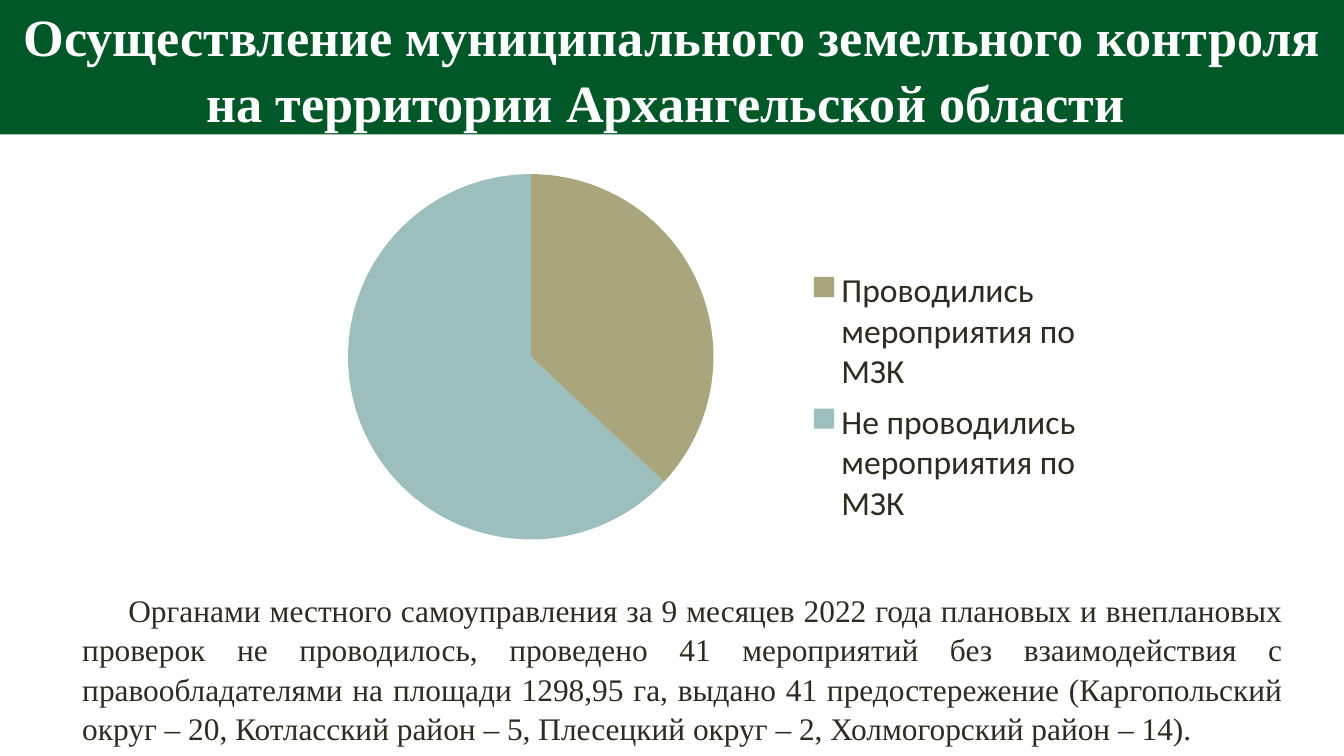
import pptx
import pptx.chart.data
import pptx.dml.color
import pptx.enum.chart
import pptx.enum.text
import pptx.oxml
import pptx.oxml.ns
import pptx.util

Cm = pptx.util.Cm
Pt = pptx.util.Pt
RGBColor = pptx.dml.color.RGBColor
Align = pptx.enum.text.PP_ALIGN
Anchor = pptx.enum.text.MSO_ANCHOR

GREEN = RGBColor(0x00, 0x58, 0x28)
WHITE = RGBColor(0xFF, 0xFF, 0xFF)
INK = RGBColor(0x2F, 0x2B, 0x20)
OLIVE = RGBColor(0xA9, 0xA5, 0x7C)
TEAL = RGBColor(0x9C, 0xBE, 0xBD)

HEADING = "Осуществление муниципального земельного контроля на территории Архангельской области "
SUMMARY = (
    "Органами местного самоуправления за 9 месяцев 2022 года плановых и внеплановых "
    "проверок не проводилось, проведено 41 мероприятий без взаимодействия с "
    "правообладателями на площади 1298,95 га, выдано 41 предостережение "
    "(Каргопольский округ – 20, Котласский район – 5, Плесецкий округ – 2, "
    "Холмогорский район – 14)."
)
SHARES = [
    ("Проводились мероприятия по МЗК", 37, OLIVE),
    ("Не проводились мероприятия по МЗК", 63, TEAL),
]

# left, top, width, height
HEADING_BOX = (Cm(0), Cm(0), Cm(25.4), Cm(2.54))
SUMMARY_BOX = (Cm(1.3), Cm(10.13), Cm(23.19), Cm(3.61))
CHART_BOX = (Cm(2.9), Cm(2.95), Cm(19.81), Cm(7.59))

# fractions of the chart: x, y, w, h
PIE_AREA = (0.185, 0.045, 0.35, 0.91)
LEGEND_AREA = (0.62, 0.26, 0.27, 0.68)


def write(holder, box, text, size, color, align, anchor, bold=False):
    holder.left, holder.top, holder.width, holder.height = box
    frame = holder.text_frame
    frame.word_wrap = True
    frame.auto_size = pptx.enum.text.MSO_AUTO_SIZE.NONE
    frame.vertical_anchor = anchor
    paragraph = frame.paragraphs[0]
    paragraph.alignment = align
    paragraph.line_spacing = 1.05
    paragraph.space_before = Pt(0)
    run = paragraph.add_run()
    run.text = text
    run.font.name = "Times New Roman"
    run.font.size = Pt(size)
    run.font.bold = bold
    run.font.color.rgb = color
    return paragraph


def manual_layout(area, inner=False):
    """Return a c:layout element that fixes a chart part at the given fractions."""
    target = '<c:layoutTarget val="inner"/>' if inner else ""
    modes = "".join(f'<c:{axis}Mode val="edge"/>' for axis in "xy")
    sizes = "".join(f'<c:{key} val="{value}"/>' for key, value in zip("xywh", area))
    return pptx.oxml.parse_xml(
        f'<c:layout {pptx.oxml.ns.nsdecls("c")}><c:manualLayout>'
        f"{target}{modes}{sizes}</c:manualLayout></c:layout>"
    )


def add_pie(slide):
    shares = pptx.chart.data.CategoryChartData()
    shares.categories = [label for label, _, _ in SHARES]
    shares.add_series("Series 1", [value for _, value, _ in SHARES])
    chart = slide.shapes.add_chart(
        pptx.enum.chart.XL_CHART_TYPE.PIE, *CHART_BOX, shares
    ).chart
    chart.has_title = False
    chart.font.name = "Calibri"
    chart.font.size = Pt(18)
    chart.font.color.rgb = INK

    plot = chart.plots[0]
    plot.vary_by_categories = True
    for index, (_, _, color) in enumerate(SHARES):
        sector = plot.series[0].points[index].format
        sector.fill.solid()
        sector.fill.fore_color.rgb = color
        sector.line.fill.background()

    chart.has_legend = True
    legend = chart.legend
    legend.position = pptx.enum.chart.XL_LEGEND_POSITION.RIGHT
    legend.include_in_layout = False

    qn = pptx.oxml.ns.qn
    plot_area = chart.element.find(".//" + qn("c:plotArea"))
    legend_part = chart.element.find(".//" + qn("c:legend"))
    for part in (plot_area, legend_part):
        for layout in part.findall(qn("c:layout")):
            part.remove(layout)
    plot_area.insert(0, manual_layout(PIE_AREA, inner=True))
    legend_part.find(qn("c:legendPos")).addnext(manual_layout(LEGEND_AREA))


def main():
    deck = pptx.Presentation()
    deck.slide_width, deck.slide_height = Cm(25.4), Cm(14.29)
    slide = deck.slides.add_slide(deck.slide_layouts[0])

    heading = slide.shapes.title
    heading.fill.solid()
    heading.fill.fore_color.rgb = GREEN
    write(heading, HEADING_BOX, HEADING, 28, WHITE, Align.CENTER, Anchor.MIDDLE, bold=True)

    summary = slide.placeholders[1]
    paragraph = write(summary, SUMMARY_BOX, SUMMARY, 16.8, INK, Align.JUSTIFY, Anchor.TOP)
    summary.text_frame.margin_top = Cm(1)
    paragraph._p.get_or_add_pPr().set("indent", str(Cm(0.87)))

    add_pie(slide)
    deck.save("out.pptx")


if __name__ == "__main__":
    main()
